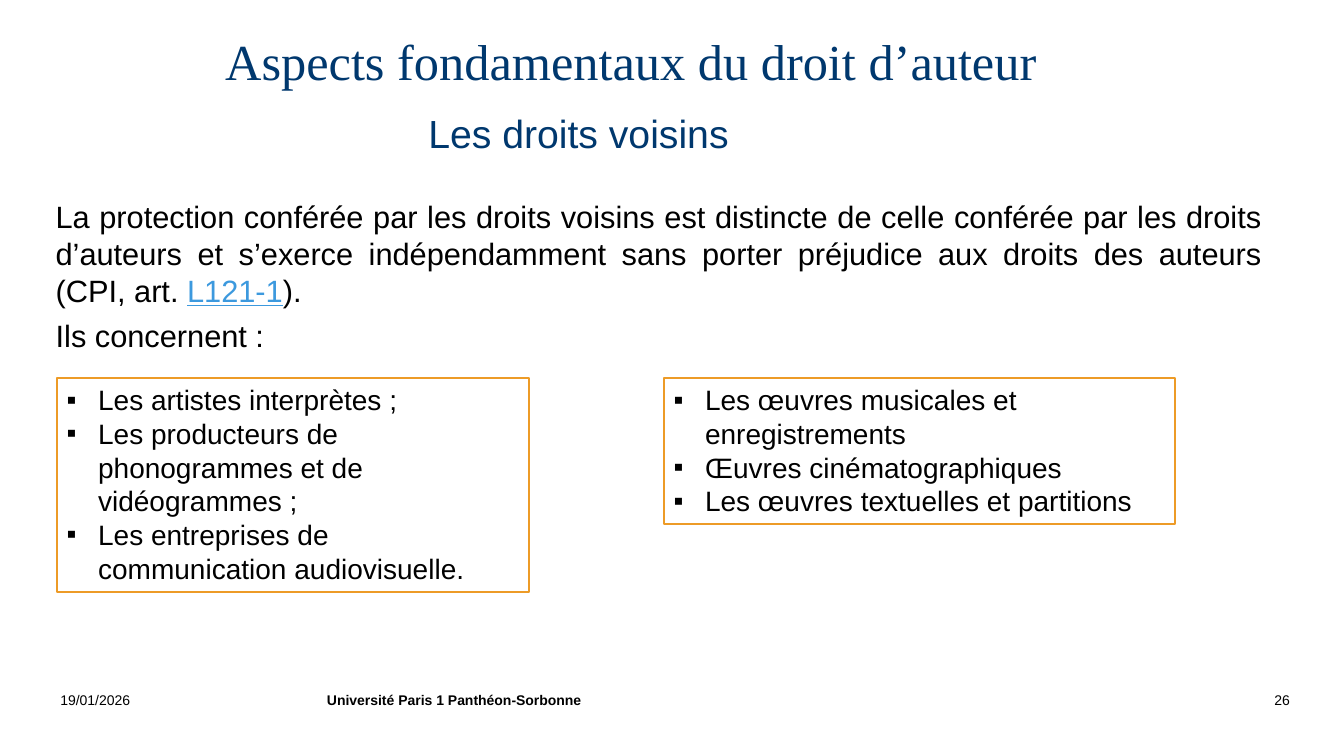
from dataclasses import dataclass

from lxml import etree
from pptx import Presentation
from pptx import util as u
from pptx.dml.color import RGBColor
from pptx.enum import shapes, text
from pptx.oxml.ns import qn

PX = 9525  # EMU in one px, 96 px to the inch


@dataclass(frozen=True)
class Theme:
    sans: str = "Arial"
    serif: str = "Times New Roman"
    ink: str = "000000"
    navy: str = "00386E"
    link: str = "3C99DE"
    frame: str = "ED9B27"
    title: int = 36
    subtitle: int = 28
    body: int = 22
    item: int = 20
    footer: int = 10


T = Theme()
ALIGN = text.PP_ALIGN


def px(n):
    return u.Emu(n * PX)


def set_frame(sp, inset=True, grow=False):
    tf = sp.text_frame
    tf.word_wrap = True
    tf.vertical_anchor = text.MSO_ANCHOR.TOP
    tf.auto_size = (text.MSO_AUTO_SIZE.SHAPE_TO_FIT_TEXT if grow
                    else text.MSO_AUTO_SIZE.NONE)
    if not inset:
        tf.margin_left = tf.margin_top = tf.margin_right = tf.margin_bottom = 0
    return tf


def add_textbox(s, box, **options):
    return set_frame(s.shapes.add_textbox(*map(px, box)), **options)


def add_paragraph(tf, first, align=ALIGN.LEFT, before=0):
    p = tf.paragraphs[0] if first else tf.add_paragraph()
    p.alignment = align
    if before:
        p.space_before = u.Pt(before)
    return p


def add_run(p, words, size, color=T.ink, font=T.sans, bold=False, underline=False):
    r = p.add_run()
    r.text = words
    r.font.name = font
    r.font.size = u.Pt(size)
    r.font.bold = bold
    r.font.underline = underline
    r.font.color.rgb = RGBColor.from_string(color)


def set_indent(p, left, first=0):
    pPr = p._p.get_or_add_pPr()
    pPr.set("marL", str(px(left)))
    pPr.set("indent", str(px(first)))
    return pPr


def add_heading(s, box, words, size, font, align=ALIGN.LEFT, indent=0):
    p = add_paragraph(add_textbox(s, box, inset=False), True, align)
    set_indent(p, indent)
    add_run(p, words, size, T.navy, font)


def add_body(s, box):
    tf = add_textbox(s, box, inset=False)
    p = add_paragraph(tf, True, ALIGN.JUSTIFY)
    add_run(p, "La protection conférée par les droits voisins est distincte de "
               "celle conférée par les droits d’auteurs et s’exerce "
               "indépendamment sans porter préjudice aux droits des auteurs "
               "(CPI, art. ", T.body)
    add_run(p, "L121-1", T.body, T.link, underline=True)
    add_run(p, ").", T.body)
    p = add_paragraph(tf, False, ALIGN.JUSTIFY, before=6)
    add_run(p, "Ils concernent :", T.body)


def add_framed_list(s, box, items):
    sp = s.shapes.add_shape(shapes.MSO_SHAPE.RECTANGLE, *map(px, box))
    sp.shadow.inherit = False
    sp.fill.background()
    sp.line.color.rgb = RGBColor.from_string(T.frame)
    sp.line.width = u.Pt(1.5)
    tf = set_frame(sp, grow=True)
    for i, item in enumerate(items):
        p = add_paragraph(tf, i == 0)
        pPr = set_indent(p, 30, -30)
        etree.SubElement(pPr, qn("a:buFont")).set("typeface", T.sans)
        etree.SubElement(pPr, qn("a:buChar")).set("char", "▪")
        add_run(p, item, T.item)


def add_footer(s, left, width, words, align=ALIGN.LEFT, bold=False):
    tf = add_textbox(s, (left, 654, width, 26), grow=True)
    add_run(add_paragraph(tf, True, align), words, T.footer, bold=bold)


def main():
    prs = Presentation()
    prs.slide_width, prs.slide_height = px(1280), px(720)
    s = prs.slides.add_slide(prs.slide_layouts[6])

    # Headings
    add_heading(s, (54, 29, 1046, 78), "Aspects fondamentaux du droit d’auteur",
                T.title, T.serif, ALIGN.CENTER, indent=48)
    add_heading(s, (408, 104, 537, 59), "Les droits voisins", T.subtitle, T.sans)

    # Introduction
    add_body(s, (53, 188, 1149, 147))

    # Holders and works
    add_framed_list(s, (54, 360, 450, 204), [
        "Les artistes interprètes ;",
        "Les producteurs de phonogrammes et de vidéogrammes ;",
        "Les entreprises de communication audiovisuelle.",
    ])
    add_framed_list(s, (632, 360, 487, 139), [
        "Les œuvres musicales et enregistrements",
        "Œuvres cinématographiques",
        "Les œuvres textuelles et partitions",
    ])

    # Footer
    add_footer(s, 48, 198, "19/01/2026")
    add_footer(s, 302, 288, "Université Paris 1 Panthéon-Sorbonne", bold=True)
    add_footer(s, 1133, 105, "26", ALIGN.RIGHT)

    prs.save("out.pptx")


if __name__ == "__main__":
    main()
